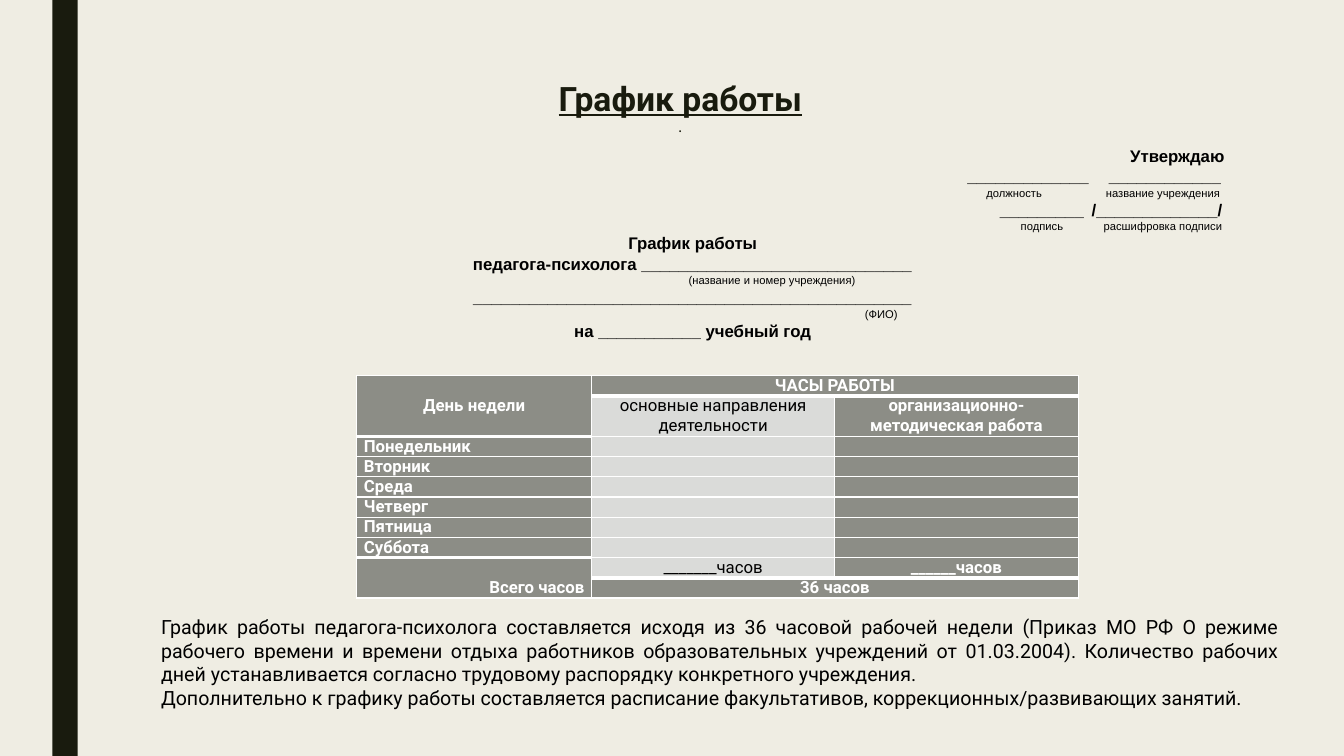
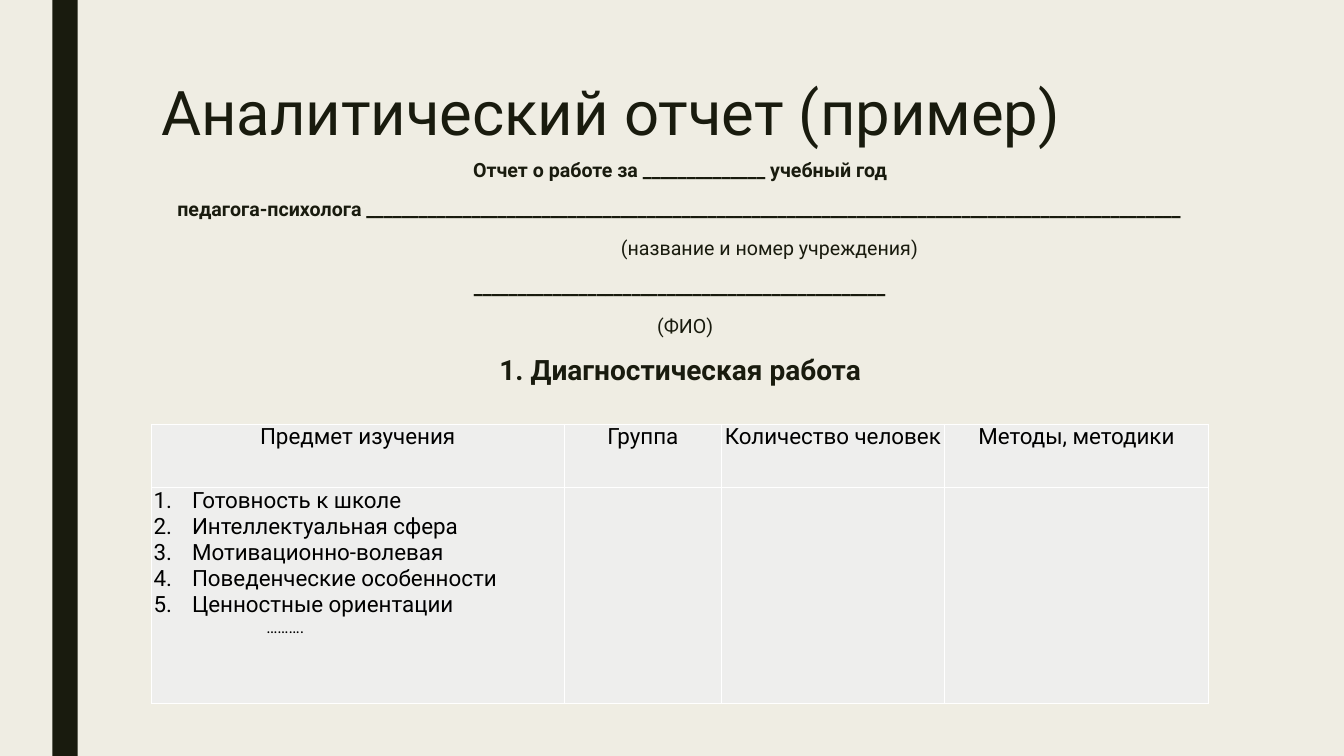
"""Build two slides with sample documents of a school psychologist."""
from dataclasses import dataclass
from typing import Optional

from lxml import etree
from pptx import Presentation
from pptx.dml.color import RGBColor
from pptx.enum.shapes import MSO_SHAPE
from pptx.enum.text import MSO_ANCHOR, PP_ALIGN
from pptx.oxml.ns import qn
from pptx.util import Cm, Pt

LEFT, CENTER, RIGHT, JUSTIFY = PP_ALIGN.LEFT, PP_ALIGN.CENTER, PP_ALIGN.RIGHT, PP_ALIGN.JUSTIFY
TOP, MIDDLE, BOTTOM = MSO_ANCHOR.TOP, MSO_ANCHOR.MIDDLE, MSO_ANCHOR.BOTTOM
RECTANGLE = MSO_SHAPE.RECTANGLE

COLORS = {
    "background": "EFEDE3",
    "dark": "191B0E",
    "black": "000000",
    "white": "FFFFFF",
    "gray": "8C8D86",
    "light_gray": "DADBD9",
    "pale": "EEEEED",
}
SLIDE_WIDTH, SLIDE_HEIGHT = 33.87, 19.05
CONTENT_LEFT, CONTENT_WIDTH = 3.81, 26.67
TITLE_TOP = 1.96
THIN, HEAVY = 1, 3


@dataclass(frozen=True)
class Line:
    text: str
    size: float = 12
    bold: bool = False
    align: PP_ALIGN = CENTER
    color: str = "black"
    font: str = "Roboto"
    underline: bool = False
    spacing: Optional[float] = None
    before: float = 0
    after: float = 0
    indent: float = 0
    hanging: float = 0
    numbered: bool = False
    tabs: tuple[float, ...] = ()


@dataclass(frozen=True)
class Cell:
    lines: tuple[Line, ...] = ()
    fill: str = "gray"
    anchor: MSO_ANCHOR = TOP


@dataclass(frozen=True)
class Grid:
    left: float
    top: float
    widths: tuple[float, ...]
    heights: tuple[float, ...]
    margin: float
    rows: list[list[Cell]]
    merges: tuple[tuple[int, int, int, int], ...] = ()
    heavy_tops: frozenset[tuple[int, int]] = frozenset()


def rgb(name: str) -> RGBColor:
    """Return the named colour."""
    return RGBColor.from_string(COLORS[name])


def write_line(paragraph, line: Line) -> None:
    """Put a line and its format into a paragraph."""
    paragraph.text = line.text
    properties = paragraph._p.get_or_add_pPr()
    if line.indent:
        properties.set("marL", str(Cm(line.indent)))
        properties.set("indent", str(-Cm(line.hanging)))
    if line.numbered:
        etree.SubElement(properties, qn("a:buAutoNum"), type="arabicPeriod")
    if line.tabs:
        tab_list = etree.SubElement(properties, qn("a:tabLst"))
        for position in line.tabs:
            etree.SubElement(tab_list, qn("a:tab"), pos=str(Cm(position)), algn="ctr")
    paragraph.alignment = line.align
    paragraph.space_before, paragraph.space_after = Pt(line.before), Pt(line.after)
    if line.spacing:
        paragraph.line_spacing = line.spacing
    font = paragraph.font
    font.name, font.size = line.font, Pt(line.size)
    font.bold, font.underline = line.bold, line.underline
    font.color.rgb = rgb(line.color)


def write_lines(frame, lines: tuple[Line, ...]) -> None:
    """Fill a text frame, one paragraph a line."""
    for index, line in enumerate(lines):
        write_line(frame.add_paragraph() if index else frame.paragraphs[0], line)


def add_text(slide, left: float, top: float, width: float, height: float, *lines: Line) -> None:
    """Add a wrapping text box."""
    frame = slide.shapes.add_textbox(Cm(left), Cm(top), Cm(width), Cm(height)).text_frame
    frame.word_wrap = True
    write_lines(frame, lines)


def set_borders(cell, top: int, bottom: int) -> None:
    """Draw white borders round a table cell."""
    properties = cell._tc.get_or_add_tcPr()
    for side, width in (("L", THIN), ("R", THIN), ("T", top), ("B", bottom)):
        border = etree.SubElement(properties, qn(f"a:ln{side}"), w=str(Pt(width)))
        fill = etree.SubElement(border, qn("a:solidFill"))
        etree.SubElement(fill, qn("a:srgbClr"), val=COLORS["white"])


def add_grid(slide, grid: Grid) -> None:
    """Add a table with its fills, borders and merged cells."""
    table = slide.shapes.add_table(
        len(grid.heights), len(grid.widths), Cm(grid.left), Cm(grid.top),
        Cm(sum(grid.widths)), Cm(sum(grid.heights)),
    ).table
    table.first_row = table.horz_banding = False
    for column, width in zip(table.columns, grid.widths):
        column.width = Cm(width)
    for row, height in zip(table.rows, grid.heights):
        row.height = Cm(height)
    for row_index, row in enumerate(grid.rows):
        for column_index, content in enumerate(row):
            cell = table.cell(row_index, column_index)
            cell.margin_left = cell.margin_right = Cm(grid.margin)
            cell.margin_top = cell.margin_bottom = 0
            cell.vertical_anchor = content.anchor
            top, bottom = (
                HEAVY if (index, column_index) in grid.heavy_tops else THIN
                for index in (row_index, row_index + 1)
            )
            set_borders(cell, top, bottom)
            cell.fill.solid()
            cell.fill.fore_color.rgb = rgb(content.fill)
            write_lines(cell.text_frame, content.lines)
            if not content.lines:
                paragraph = cell.text_frame.paragraphs[0]
                etree.SubElement(paragraph._p, qn("a:endParaRPr"), sz=str(1200))
    for first_row, first_column, last_row, last_column in grid.merges:
        table.cell(first_row, first_column).merge(table.cell(last_row, last_column))


def add_slide(presentation, *title: Line):
    """Add a slide with the shared background, band and title."""
    slide = presentation.slides.add_slide(presentation.slide_layouts[6])
    slide.background.fill.solid()
    slide.background.fill.fore_color.rgb = rgb("background")
    band = slide.shapes.add_shape(RECTANGLE, Cm(1.32), 0, Cm(0.64), Cm(SLIDE_HEIGHT))
    band.shadow.inherit = False
    band.fill.solid()
    band.fill.fore_color.rgb = rgb("dark")
    band.line.fill.background()
    add_text(slide, CONTENT_LEFT, TITLE_TOP, CONTENT_WIDTH, 1.6, *title)
    return slide


def title_line(text: str, size: float, **style) -> Line:
    """Return a line in the title style."""
    return Line(text, size, color="dark", spacing=0.89, **style)


def form_line(text: str, **style) -> Line:
    """Return a bold line of the schedule form."""
    return Line(text, bold=True, font="Arial", **style)


def form_caption(text: str, **style) -> Line:
    """Return a small caption of the schedule form."""
    return Line(text, 8, font="Arial", **style)


def report_line(text: str, size: float = 14, bold: bool = True, indent: float = 0) -> Line:
    """Return a line of the report heading."""
    return Line(text, size, bold, color="dark", spacing=0.94, before=10, after=2, indent=indent)


def dark_cell(text: str = "", align: PP_ALIGN = CENTER, anchor: MSO_ANCHOR = TOP) -> Cell:
    """Return a gray cell with bold white text."""
    lines = (Line(text, bold=True, align=align, color="white"),) if text else ()
    return Cell(lines, "gray", anchor)


def light_cell(text: str = "") -> Cell:
    """Return a light cell with black text."""
    return Cell((Line(text),) if text else (), "light_gray")


def add_schedule_slide(presentation) -> None:
    """Add the slide with the work schedule."""
    slide = add_slide(
        presentation,
        title_line("График работы", 24, bold=True, underline=True),
        title_line(".", 12),
    )
    days = ("Понедельник", "Вторник", "Среда", "Четверг", "Пятница", "Суббота")
    rows = [
        [dark_cell("День недели", anchor=MIDDLE), dark_cell("ЧАСЫ РАБОТЫ"), dark_cell()],
        [dark_cell(), light_cell("основные направления деятельности"),
         dark_cell("организационно-методическая работа")],
        *([dark_cell(day, LEFT), light_cell(), dark_cell()] for day in days),
        [dark_cell("Всего часов", RIGHT, BOTTOM), light_cell("_" * 7 + "часов"),
         dark_cell("_" * 6 + "часов")],
        [dark_cell(), dark_cell("36 часов"), dark_cell()],
    ]
    add_grid(slide, Grid(
        8.99, 9.47, (5.92, 6.13, 6.13), (0.5, 1) + (0.5,) * 8, 0.18, rows,
        merges=((0, 0, 1, 0), (0, 1, 0, 2), (8, 0, 9, 0), (9, 1, 9, 2)),
        heavy_tops=frozenset({(1, 1), (1, 2), (2, 0), (8, 0), (9, 1), (9, 2)}),
    ))
    add_text(
        slide, CONTENT_LEFT, 3.55, 27.3, 5.5,
        form_line("Утверждаю", align=RIGHT),
        form_line("\t" + "_" * 13 + "\t" + "_" * 12, align=LEFT, tabs=(21.85, 25.3)),
        form_caption("\tдолжность\tназвание учреждения", align=LEFT, tabs=(21.5, 25.25)),
        form_line("\t" + "_" * 9 + "\t/" + "_" * 13 + "/", align=LEFT, tabs=(22.2, 25.1)),
        form_caption("\tподпись\tрасшифровка подписи", align=LEFT, tabs=(22.2, 25.25)),
        form_line("График работы"),
        form_line("педагога-психолога " + "_" * 29),
        form_caption("(название и номер учреждения)", indent=4),
        form_line("_" * 47),
        form_caption("(ФИО)", indent=9.5),
        form_line("на " + "_" * 11 + " учебный год"),
    )
    notes = (
        "График работы педагога-психолога составляется исходя из 36 часовой рабочей недели "
        "(Приказ МО РФ О режиме рабочего времени и времени отдыха работников образовательных "
        "учреждений от 01.03.2004). Количество рабочих дней устанавливается согласно трудовому "
        "распорядку конкретного учреждения.",
        "Дополнительно к графику работы составляется расписание факультативов, "
        "коррекционных/развивающих занятий.",
    )
    add_text(slide, CONTENT_LEFT, 15.37, 28.68, 3.25,
             *(Line(note, 14, align=JUSTIFY) for note in notes))


def add_report_slide(presentation) -> None:
    """Add the slide with the analytical report."""
    slide = add_slide(presentation, title_line("Аналитический отчет (пример)", 44, align=LEFT))
    add_text(
        slide, CONTENT_LEFT, 3.91, CONTENT_WIDTH, 6.2,
        report_line("Отчет о работе за " + "_" * 14 + " учебный год"),
        report_line("педагога-психолога " + "_" * 93),
        report_line("(название и номер учреждения)", bold=False, indent=4.5),
        report_line("_" * 47),
        report_line("(ФИО)", bold=False, indent=0.25),
        report_line("1. Диагностическая работа", 20),
    )
    headings = ("Предмет изучения", "Группа", "Количество человек", "Методы, методики")
    subjects = (
        "Готовность к школе", "Интеллектуальная сфера", "Мотивационно-волевая",
        "Поведенческие особенности", "Ценностные ориентации",
    )
    subject_lines = tuple(
        Line(subject, 16, align=JUSTIFY, indent=0.97, hanging=0.97, numbered=True)
        for subject in subjects
    )
    more = Line("……….", align=LEFT, indent=2.84)
    rows = [
        [Cell((Line(heading, 16),), "pale") for heading in headings],
        [Cell((*subject_lines, more), "pale")] + [Cell(fill="pale")] * 3,
    ]
    add_grid(slide, Grid(CONTENT_LEFT, 10.69, (10.41, 3.96, 5.62, 6.66), (1.6, 5.44), 0.06, rows))


def main() -> None:
    """Build and save the presentation."""
    presentation = Presentation()
    presentation.slide_width, presentation.slide_height = Cm(SLIDE_WIDTH), Cm(SLIDE_HEIGHT)
    add_schedule_slide(presentation)
    add_report_slide(presentation)
    presentation.save("out.pptx")


if __name__ == "__main__":
    main()
